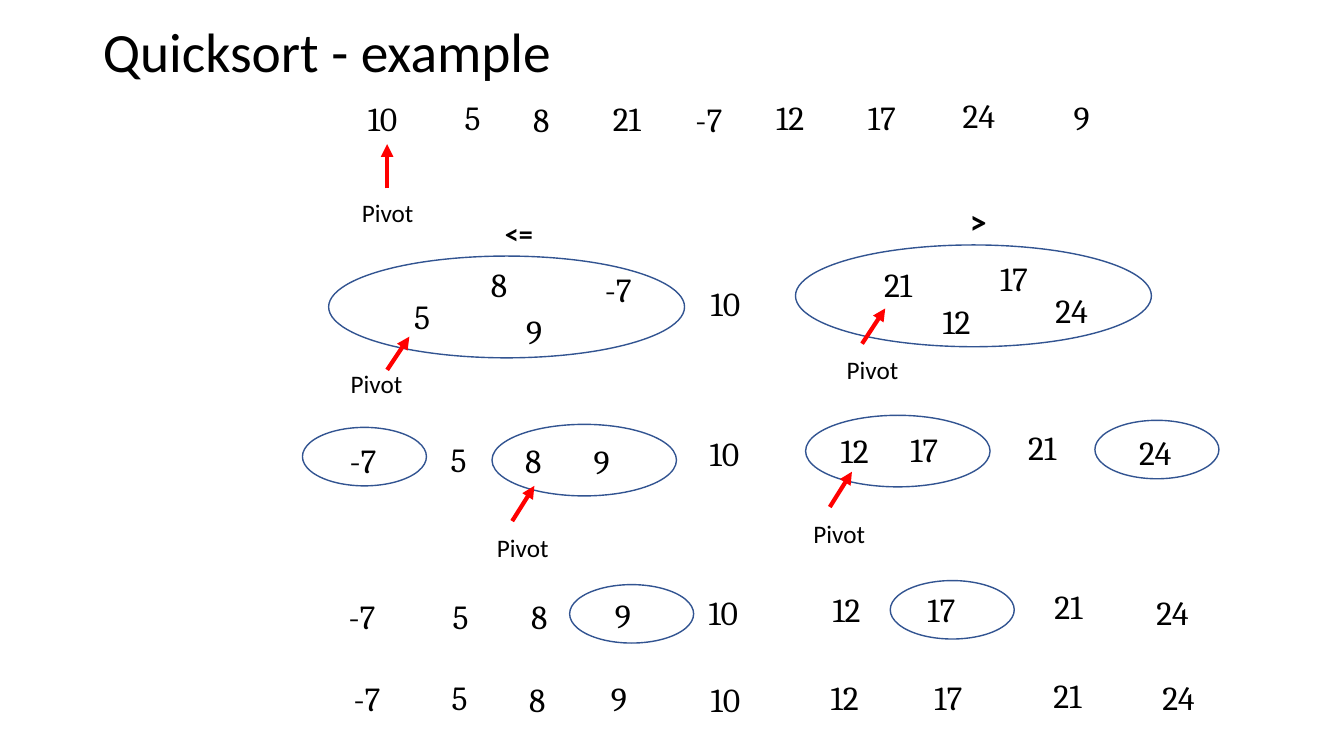
"""Quicksort example: the list after each round of partitioning."""
from lxml.etree import SubElement
from pptx import Presentation
from pptx.dml.color import RGBColor
from pptx.enum.shapes import MSO_CONNECTOR, MSO_SHAPE
from pptx.enum.text import MSO_ANCHOR, MSO_AUTO_SIZE, PP_ALIGN
from pptx.oxml.ns import qn
from pptx.util import Inches, Pt


def rgb(value):
    return RGBColor.from_string(value)


def add_text(tf, text, size, font, bold=False):
    p = tf.paragraphs[0]
    p.alignment = PP_ALIGN.LEFT
    r = p.add_run()
    r.text = text
    r.font.size = Pt(size)
    r.font.name = font
    r.font.bold = bold
    r.font.color.rgb = rgb("000000")
    return p


prs = Presentation()
prs.slide_width = Inches(13.33)
prs.slide_height = Inches(7.5)
s = prs.slides.add_slide(prs.slide_layouts[5])

title = s.shapes.title
title.left, title.top = Inches(0.92), Inches(0.21)
title.width, title.height = Inches(11.5), Inches(0.66)
tf = title.text_frame
tf.auto_size = MSO_AUTO_SIZE.NONE
tf.vertical_anchor = MSO_ANCHOR.MIDDLE
add_text(tf, "Quicksort - example", 39.6, "Calibri").line_spacing = 0.9

LARGE, MEDIUM, SMALL = (3.53, 1.01), (1.83, 0.71), (1.23, 0.58)
partitions = [
    (3.26, 2.54, LARGE), (7.89, 2.43, LARGE),
    (3, 4.24, SMALL), (4.88, 4.21, MEDIUM), (7.99, 4.12, MEDIUM), (10.86, 4.17, SMALL),
    (5.65, 5.8, SMALL), (8.83, 5.76, SMALL),
]
for x, y, (w, h) in partitions:
    sp = s.shapes.add_shape(MSO_SHAPE.OVAL, Inches(x), Inches(y), Inches(w), Inches(h))
    sp.shadow.inherit = False
    sp.fill.background()
    sp.line.color.rgb = rgb("325491")
    sp.line.width = Pt(1)

rounds = [
    [("10", 3.55, 0.92), ("5", 4.51, 0.91), ("8", 5.19, 0.93), ("21", 5.98, 0.92), ("-7", 6.8, 0.93),
     ("12", 7.6, 0.91), ("17", 8.51, 0.91), ("24", 9.45, 0.89), ("9", 10.55, 0.91)],
    [("5", 4.01, 2.89), ("8", 4.77, 2.57), ("-7", 5.9, 2.62), ("9", 5.12, 3.04), ("10", 6.95, 2.76),
     ("21", 8.67, 2.57), ("12", 9.25, 2.94), ("24", 10.37, 2.83), ("17", 9.82, 2.51)],
    [("-7", 3.37, 4.32), ("5", 4.37, 4.31), ("8", 5.11, 4.32), ("9", 5.79, 4.33), ("10", 6.94, 4.25),
     ("12", 8.24, 4.22), ("17", 8.93, 4.21), ("21", 10.1, 4.19), ("24", 11.2, 4.24)],
    [("-7", 3.36, 5.86), ("5", 4.39, 5.86), ("8", 5.17, 5.86), ("9", 6, 5.85), ("10", 6.93, 5.82),
     ("12", 8.16, 5.79), ("17", 9.1, 5.79), ("21", 10.36, 5.76), ("24", 11.37, 5.82)],
    [("-7", 3.41, 6.68), ("5", 4.38, 6.67), ("8", 5.15, 6.69), ("9", 5.96, 6.68), ("10", 6.95, 6.69),
     ("12", 8.14, 6.67), ("17", 9.17, 6.67), ("21", 10.35, 6.65), ("24", 11.43, 6.67)],
]
for numbers in rounds:
    for text, x, y in numbers:
        w = 0.39 if len(text) == 1 else 0.5 if text.startswith("-") else 0.57
        sp = s.shapes.add_textbox(Inches(x), Inches(y), Inches(w), Inches(0.5))
        sp.text_frame.word_wrap = False
        add_text(sp.text_frame, text, 24, "Cambria")

pivots = [
    ((3.84, 1.87), (3.84, 1.43), (3.49, 1.91)),
    ((3.84, 3.67), (4.06, 3.34), (3.38, 3.61)),
    ((5.08, 5.17), (5.3, 4.82), (4.83, 5.23)),
    ((8.55, 3.41), (8.78, 3.06), (8.3, 3.47)),
    ((8.23, 5.03), (8.45, 4.68), (7.97, 5.09)),
]
for start, end, label in pivots:
    arrow = s.shapes.add_connector(MSO_CONNECTOR.STRAIGHT, *map(Inches, start + end))
    arrow.line.color.rgb = rgb("FF0000")
    arrow.line.width = Pt(3)
    SubElement(arrow.line._get_or_add_ln(), qn("a:tailEnd"), type="triangle")
    SubElement(arrow._element.spPr, qn("a:effectLst"))
    sp = s.shapes.add_textbox(*map(Inches, label + (0.8, 0.4)))
    sp.text_frame.word_wrap = True
    add_text(sp.text_frame, "Pivot", 18, "Calibri")

for text, x, y, h, size in [("<=", 4.91, 2.1, 0.44, 20), (">", 9.52, 1.94, 0.5, 24)]:
    sp = s.shapes.add_textbox(Inches(x), Inches(y), Inches(0.48), Inches(h))
    sp.text_frame.word_wrap = text == ">"
    add_text(sp.text_frame, text, size, "Calibri", bold=True)

prs.save("out.pptx")
